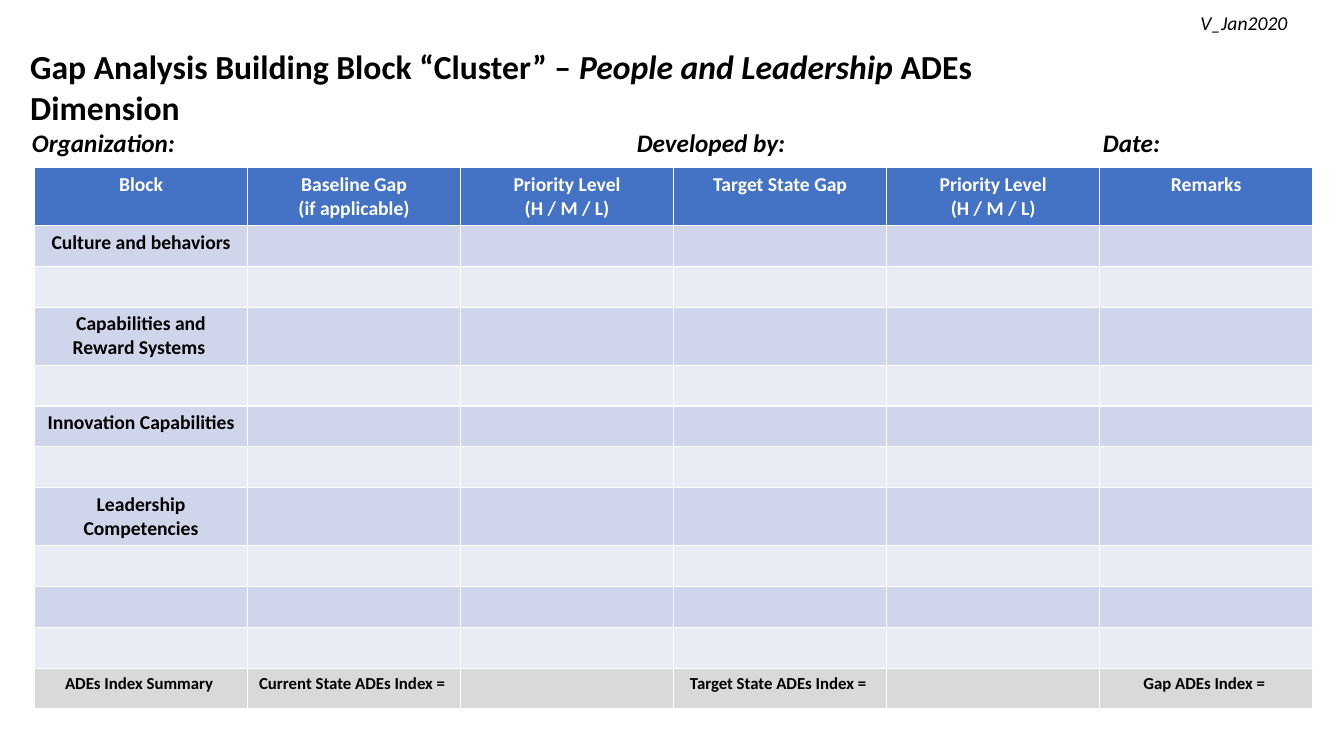
"""Build the People and Leadership gap analysis slide."""
from lxml.etree import SubElement
from pptx import Presentation
from pptx.dml.color import RGBColor
from pptx.enum.text import MSO_ANCHOR as Anchor, MSO_AUTO_SIZE as AutoSize, PP_ALIGN as Align
from pptx.oxml.ns import qn
from pptx.util import Pt


def paint(colour_format, hex_code):
    colour_format.rgb = RGBColor.from_string(hex_code)


def style(font, size, hex_code="000000", **extras):
    for name, value in {"name": "Calibri", "size": Pt(size), **extras}.items():
        setattr(font, name, value)
    paint(font.color, hex_code)


deck = Presentation()
deck.slide_width, deck.slide_height = Pt(960), Pt(540)
slide = deck.slides.add_slide(deck.slide_layouts[5])

heading = slide.shapes.title
details = slide.shapes.add_textbox(0, 0, 0, 0)
version = slide.shapes.add_textbox(0, 0, 0, 0)
places = [
    (heading, (14.4, 29.5, 799, 36)),
    (details, (15.8, 87.1, 916, 29)),
    (version, (850.3, 4.3, 78, 24.5)),
]
for part, bounds in places:
    for side, length in zip(("left", "top", "width", "height"), bounds):
        setattr(part, side, Pt(length))
    frame_format = {"word_wrap": part is details, "auto_size": AutoSize.NONE,
                    "vertical_anchor": Anchor.TOP}
    for name, value in frame_format.items():
        setattr(part.text_frame, name, value)

title_line = heading.text_frame.paragraphs[0]
title_line.alignment = Align.LEFT
for words, italic in [
    ("Gap Analysis Building Block “Cluster” – ", False),
    ("People and Leadership ", True),
    ("ADEs Dimension", False),
]:
    run = title_line.add_run()
    run.text = words
    style(run.font, 24, bold=True, italic=italic)

details_line = details.text_frame.paragraphs[0]
tab_stops = SubElement(details_line._p.get_or_add_pPr(), qn("a:tabLst"))
for stop in (432, 765):
    SubElement(tab_stops, qn("a:tab"), pos=str(Pt(stop)), algn="l")
details_run = details_line.add_run()
details_run.text = "Organization:\tDeveloped by:\tDate:"
style(details_run.font, 18, bold=True, italic=True)

version_run = version.text_frame.paragraphs[0].add_run()
version_run.text = "V_Jan2020"
style(version_run.font, 14, italic=True)

priority = "Priority Level\n(H / M / L)"
header = ["Block", "Baseline Gap\n(if applicable)", priority, "Target State Gap", priority, "Remarks"]
blocks = ["Culture and behaviors", "", "Capabilities and Reward Systems ", "",
          "Innovation Capabilities", "", "Leadership Competencies", "", "", ""]
summary = ["ADEs Index Summary ", "Current State ADEs Index = ", "",
           "Target State ADEs Index = ", "", "Gap ADEs Index = "]
bands = ["CFD5EA", "E9EBF5"]
rows = [(header, "4472C4", "FFFFFF", 14)]
rows += [([block] + [""] * 5, bands[i % 2], "000000", 14) for i, block in enumerate(blocks)]
rows.append((summary, "D9D9D9", "000000", 12))

gap_table = slide.shapes.add_table(
    len(rows), len(header), Pt(24.7), Pt(119.8), Pt(913), Pt(29.2 * len(rows))).table
for column in gap_table.columns:
    column.width = Pt(913 / len(header))
for row, (texts, fill, ink, size) in zip(gap_table.rows, rows):
    row.height = Pt(29.2)
    for cell, words in zip(row.cells, texts):
        cell.fill.solid()
        paint(cell.fill.fore_color, fill)
        if words:
            cell.text = words
            for line in cell.text_frame.paragraphs:
                line.alignment = Align.CENTER
                style(line.runs[0].font, size, ink, bold=True)

deck.save("out.pptx")
